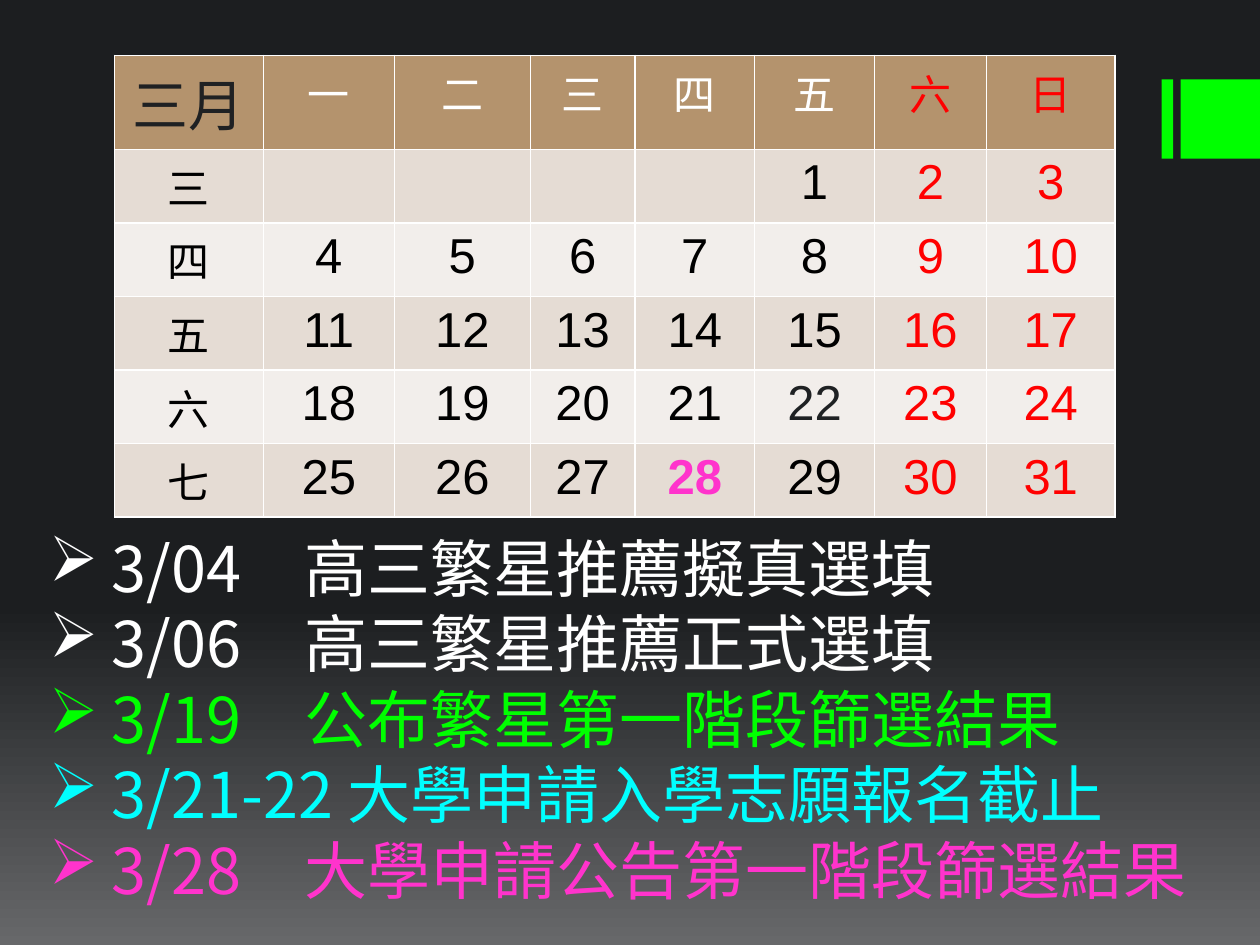
import copy

import pptx
import pptx.dml.color
import pptx.enum.shapes
import pptx.enum.text
import pptx.oxml
import pptx.oxml.ns
import pptx.util
from pptx.util import Inches

WHITE, BLACK, INK = "FFFFFF", "000000", "1F2123"
RED, GREEN, CYAN, PINK = "FF0000", "00FF00", "00FFFF", "FF33CC"
HEADER_FILL, BANDS = "B4936D", ("E5DCD4", "F2EEEB")

WEEKDAYS = "一二三四五六日"
WEEKS = "三四五六七"
FIRST_COLUMN = 5
DAY_COLORS = {22: INK, 28: PINK}
COLUMN_WIDTHS = (1.18, 1.04, 1.08, 0.83, 0.95, 0.95, 0.89, 1.02)
HEADER_HEIGHT, WEEK_HEIGHT = 0.64, 0.57

EVENTS = (
    ("3/04　高三繁星推薦擬真選填", WHITE),
    ("3/06　高三繁星推薦正式選填", WHITE),
    ("3/19　公布繁星第一階段篩選結果", GREEN),
    ("3/21-22 大學申請入學志願報名截止", CYAN),
    ("3/28　大學申請公告第一階段篩選結果", PINK),
)


def rgb(color):
    """Turn a hex string into a colour."""
    return pptx.dml.color.RGBColor.from_string(color)


def format_run(r, size, color, font, bold=False):
    """Set the font, size, colour and weight of a run."""
    r.font.name = font
    r.font.size = pptx.util.Pt(size)
    r.font.bold = bold
    r.font.color.rgb = rgb(color)


def paint_background(s):
    """Fill the slide with a three-stop vertical gradient."""
    fill = s.background.fill
    fill.gradient()
    fill.gradient_angle = 270
    stop_list = s.element.find(".//" + pptx.oxml.ns.qn("a:gsLst"))
    stop_list.append(copy.deepcopy(stop_list[-1]))
    stops = ((0, "1C1E20"), (0.65, "1E2022"), (1, "67686A"))
    for stop, (position, color) in zip(fill.gradient_stops, stops):
        stop.position = position
        stop.color.rgb = rgb(color)


def add_accent(s, left, top, size):
    """Draw the narrow bar and the square beside it."""
    for offset, width in ((0, 0.09), (0.15, size)):
        sp = s.shapes.add_shape(
            pptx.enum.shapes.MSO_SHAPE.RECTANGLE,
            Inches(left + offset), Inches(top), Inches(width), Inches(size))
        sp.shadow.inherit = False
        sp.fill.solid()
        sp.fill.fore_color.rgb = rgb(GREEN)
        sp.line.fill.background()


def fill_cell(cell, text, fill, size, color, bold=False):
    """Colour a table cell and write its centred text."""
    cell.fill.solid()
    cell.fill.fore_color.rgb = rgb(fill)
    if not text:
        return
    p = cell.text_frame.paragraphs[0]
    p.text = text
    p.alignment = pptx.enum.text.PP_ALIGN.CENTER
    format_run(p.runs[0], size, color, "Arial", bold)


def add_calendar(s, left, top):
    """Build the month table with numbered weeks and red weekends."""
    height = HEADER_HEIGHT + WEEK_HEIGHT * len(WEEKS)
    table = s.shapes.add_table(
        len(WEEKS) + 1, len(COLUMN_WIDTHS), Inches(left), Inches(top),
        Inches(sum(COLUMN_WIDTHS)), Inches(height)).table
    for column, width in zip(table.columns, COLUMN_WIDTHS):
        column.width = Inches(width)
    for i, row in enumerate(table.rows):
        row.height = Inches(WEEK_HEIGHT if i else HEADER_HEIGHT)

    fill_cell(table.cell(0, 0), "三月", HEADER_FILL, 32, INK)
    for col, name in enumerate(WEEKDAYS, 1):
        fill_cell(table.cell(0, col), name, HEADER_FILL, 24, RED if col > 5 else WHITE)
    for row, week in enumerate(WEEKS, 1):
        band = BANDS[(row - 1) % 2]
        fill_cell(table.cell(row, 0), week, band, 24, BLACK)
        for col in range(1, 8):
            day = (row - 1) * 7 + col - FIRST_COLUMN + 1
            color = DAY_COLORS.get(day, RED if col > 5 else BLACK)
            fill_cell(table.cell(row, col), str(day) if day > 0 else "",
                      band, 28, color, day == 28)


def add_events(s, left, top, width, height):
    """List the dated events with arrow bullets."""
    tf = s.shapes.add_textbox(
        Inches(left), Inches(top), Inches(width), Inches(height)).text_frame
    tf.word_wrap = True
    tf.margin_top, tf.margin_bottom = Inches(0.09), Inches(0.01)
    tf.text = "\n".join(text for text, _ in EVENTS)
    for p, (_, color) in zip(tf.paragraphs, EVENTS):
        p.line_spacing = pptx.util.Pt(43.2)
        format_run(p.runs[0], 36, color, "Noto Sans CJK SC")
        properties = p._p.get_or_add_pPr()
        properties.set("marL", str(Inches(0.5)))
        properties.set("indent", str(Inches(-0.5)))
        properties.append(pptx.oxml.parse_xml(
            f'<a:buChar {pptx.oxml.ns.nsdecls("a")} char="➢"/>'))
        ea = pptx.oxml.parse_xml(
            f'<a:ea {pptx.oxml.ns.nsdecls("a")} typeface="Noto Sans CJK SC"/>')
        p.runs[0].font._element.find(pptx.oxml.ns.qn("a:latin")).addnext(ea)


def main():
    """Build and save the slide."""
    prs = pptx.Presentation()
    prs.slide_width, prs.slide_height = Inches(10), Inches(7.5)
    s = prs.slides.add_slide(prs.slide_layouts[6])
    paint_background(s)
    add_accent(s, 9.22, 0.63, 0.63)
    add_calendar(s, 0.91, 0.44)
    add_events(s, 0.29, 4.11, 9.71, 3.13)
    prs.save("out.pptx")


if __name__ == "__main__":
    main()
